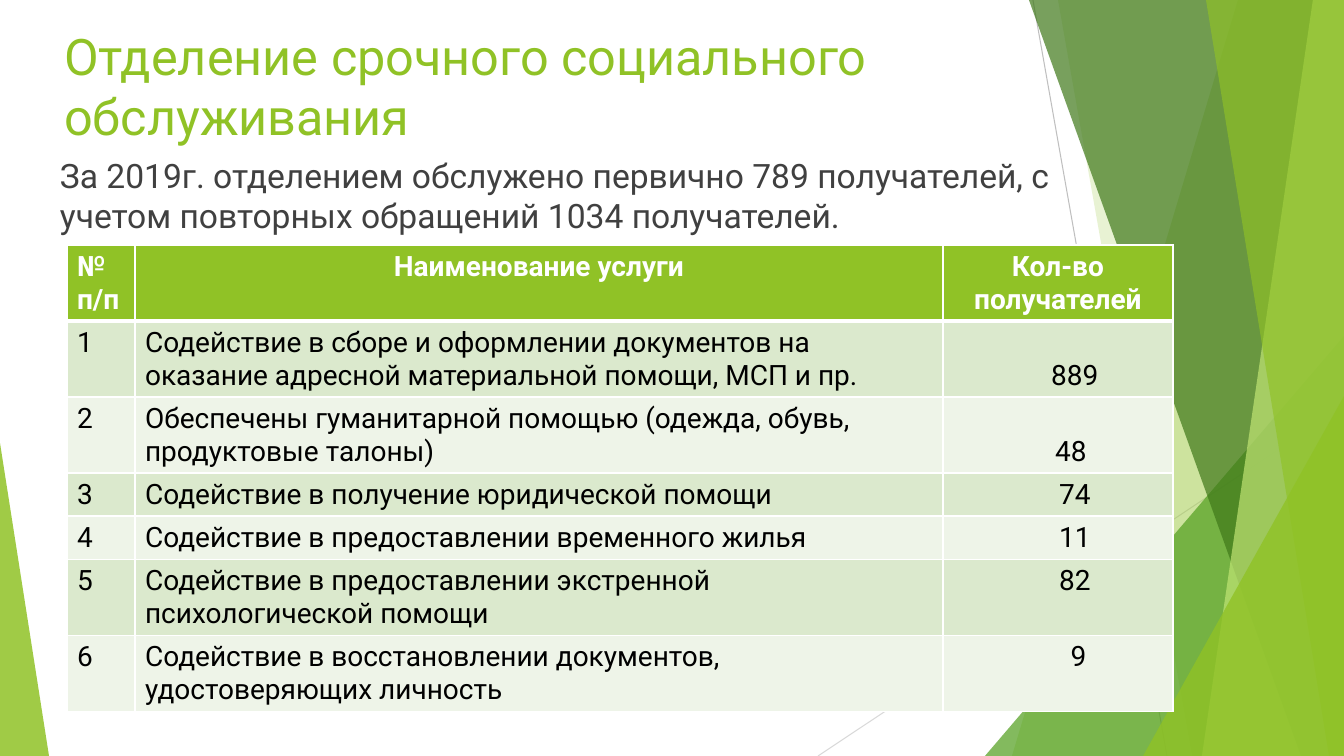
from dataclasses import dataclass

from lxml.etree import SubElement as Sub
from pptx import Presentation
from pptx.dml.color import RGBColor as RGB
from pptx.enum.shapes import MSO_CONNECTOR as Link, MSO_SHAPE as Kind
from pptx.enum.text import MSO_ANCHOR as Anchor, MSO_AUTO_SIZE as Fit, PP_ALIGN as Align
from pptx.oxml.ns import qn
from pptx.util import Pt

PX = 914400 / 100.8
WIDE, HIGH = 1344, 756


def emu(*px):
    return [round(v * PX) for v in px]


@dataclass(frozen=True)
class Theme:
    font: str = "Roboto"
    lime: str = "90C226"
    leaf: str = "54A021"
    pine: str = "3F7819"
    pale: str = "C0E474"
    odd: str = "DBE9CD"
    even: str = "EEF4E8"
    text: str = "404040"
    black: str = "000000"
    white: str = "FFFFFF"
    gray: str = "BFBFBF"
    mist: str = "D9D9D9"
    head: int = 36
    body: int = 24
    cell: int = 20


class Deck:
    """Draws styled elements on the current slide, with lengths in px."""

    def __init__(self, style):
        self.style = style
        self.file = Presentation()
        self.file.slide_width, self.file.slide_height = emu(WIDE, HIGH)
        self.slide = self.file.slides.add_slide(self.file.slide_layouts[5])
        self.shapes = self.slide.shapes

    def run(self, para, text, size, color, bold=False, align=Align.LEFT):
        para.alignment = align
        run = para.add_run()
        run.text = text
        font = run.font
        font.name, font.size, font.bold = self.style.font, Pt(size), bold
        font.color.rgb = RGB.from_string(color)

    def paint(self, shape, color, alpha):
        shape.shadow.inherit = False
        shape.line.fill.background()
        shape.fill.solid()
        shape.fill.fore_color.rgb = RGB.from_string(color)
        tint = shape.element.spPr.find(".//" + qn("a:srgbClr"))
        Sub(tint, qn("a:alpha")).set("val", str(alpha * 1000))

    def line(self, start, end, color):
        link = self.shapes.add_connector(Link.STRAIGHT, *emu(*start, *end))
        link.line.width = Pt(0.75)
        link.line.color.rgb = RGB.from_string(color)
        Sub(link.element.spPr, qn("a:effectLst"))

    def band(self, top, foot, color, alpha):
        form = self.shapes.build_freeform(top, 0, scale=PX)
        form.add_line_segments([(WIDE, 0), (WIDE, HIGH), (foot, HIGH)])
        self.paint(form.convert_to_shape(), color, alpha)

    def wedge(self, left, top, width, tip, color, alpha):
        box = emu(left, top, width, HIGH - top)
        shape = self.shapes.add_shape(Kind.ISOSCELES_TRIANGLE, *box)
        shape.adjustments[0] = tip
        self.paint(shape, color, alpha)

    def fill(self, shape, text, size, color):
        frame = shape.text_frame
        frame.word_wrap, frame.auto_size = True, Fit.NONE
        frame.vertical_anchor = Anchor.TOP
        self.run(frame.paragraphs[0], text, size, color)

    def title(self, box, text):
        shape = self.shapes.title
        shape.left, shape.top, shape.width, shape.height = emu(*box)
        self.fill(shape, text, self.style.head, self.style.lime)
        shape.element.getparent().append(shape.element)

    def note(self, box, text):
        shape = self.shapes.add_textbox(*emu(*box))
        self.fill(shape, text, self.style.body, self.style.text)

    def edge(self, cell, **wide):
        props = cell._tc.get_or_add_tcPr()
        for side in "LRTB":
            line = Sub(props, qn("a:ln" + side))
            line.set("w", str(Pt(wide.get(side, 1))))
            ink = Sub(Sub(line, qn("a:solidFill")), qn("a:srgbClr"))
            ink.set("val", self.style.white)

    def cell(self, cell, row, text, align):
        style, top = self.style, row == 0
        self.edge(cell, B=3 if top else 1, T=3 if row == 1 else 1)
        shade = style.lime if top else style.odd if row % 2 else style.even
        cell.fill.solid()
        cell.fill.fore_color.rgb = RGB.from_string(shade)
        color = style.white if top else style.black
        para = cell.text_frame.paragraphs[0]
        self.run(para, text, style.cell, color, top, align)

    def table(self, left, top, cols, rows, head, data):
        box = emu(left, top, sum(cols), sum(rows))
        grid = self.shapes.add_table(len(rows), len(cols), *box).table
        for col, width in zip(grid.columns, emu(*cols)):
            col.width = width
        for row, height in zip(grid.rows, emu(*rows)):
            row.height = height
        for col, text in enumerate(head):
            self.cell(grid.cell(0, col), 0, text, Align.CENTER if col else Align.LEFT)
        for row, (name, count, inset, low) in enumerate(data, 1):
            self.cell(grid.cell(row, 0), row, str(row), Align.LEFT)
            self.cell(grid.cell(row, 1), row, name, Align.LEFT)
            last = grid.cell(row, 2)
            self.cell(last, row, count, Align.CENTER)
            last.margin_left, = emu(inset)
            last.vertical_anchor = Anchor.BOTTOM if low else Anchor.TOP


HEAD = ["№ п/п", "Наименование услуги", "Кол-во получателей"]
DATA = [
    ("Содействие в сборе и оформлении документов на оказание адресной "
     "материальной помощи, МСП и пр.", "889", 44, True),
    ("Обеспечены гуманитарной помощью (одежда, обувь, продуктовые талоны)",
     "48", 36, True),
    ("Содействие в получение юридической помощи", "74", 44, False),
    ("Содействие в предоставлении временного жилья", "11", 44, False),
    ("Содействие в предоставлении экстренной психологической помощи",
     "82", 44, False),
    ("Содействие в восстановлении документов, удостоверяющих личность",
     "9", 51, False),
]


def main():
    style = Theme()
    deck = Deck(style)
    deck.line((1033, 0), (1167, HIGH), style.gray)
    deck.line((WIDE, 406), (818, HIGH), style.mist)
    deck.band(1238, 1012, style.lime, 30)
    deck.band(1058, 1192, style.lime, 20)
    deck.wedge(985, 336, 359, 1, style.leaf, 72)
    deck.band(1029, 1301, style.pine, 70)
    deck.band(1313, 1202, style.pale, 70)
    deck.band(1206, 1329, style.lime, 65)
    deck.wedge(1143, 396, 201, 1, style.lime, 80)
    deck.wedge(0, 443, 49, 0, style.lime, 85)
    deck.title((54, 20, 948, 145), "Отделение срочного социального обслуживания")
    deck.note((50, 150, 1081, 109),
              "За 2019г. отделением обслужено первично 789 получателей, "
              "с учетом повторных обращений 1034 получателей.")
    tall, flat = 76, 43
    rows = [tall, tall, tall, flat, flat, tall, tall]
    deck.table(67, 245, [68, 808, 230], rows, HEAD, DATA)
    deck.file.save("out.pptx")


if __name__ == "__main__":
    main()
